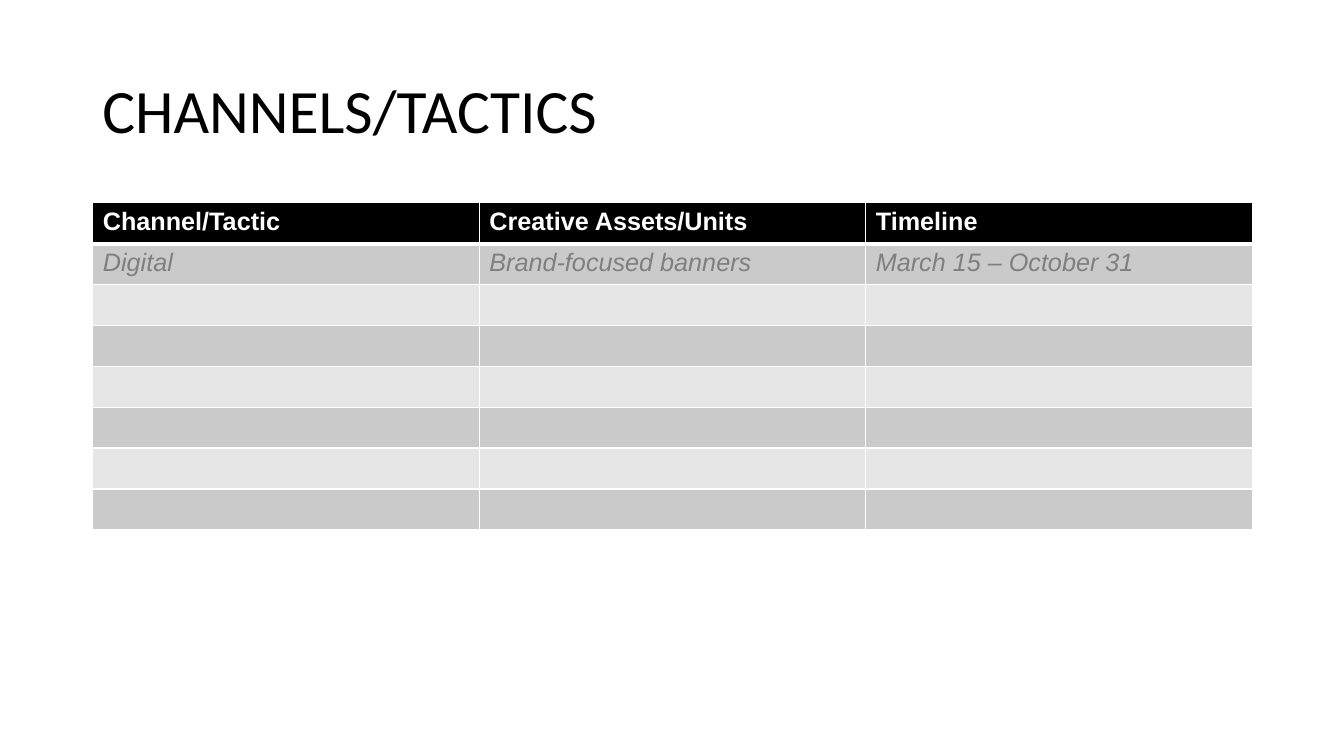
from lxml.etree import SubElement as Sub
from pptx import Presentation
from pptx.dml.color import RGBColor as RGB
from pptx.enum.text import MSO_ANCHOR as Anchor
from pptx.oxml.ns import qn
from pptx.util import Cm, Pt

COLORS = {
    "black": "000000",
    "white": "FFFFFF",
    "gray": "7F7F7F",
    "dark": "CACACA",
    "light": "E6E6E6",
}
ROWS = [
    ["Channel/Tactic", "Creative Assets/Units", "Timeline"],
    ["Digital", "Brand-focused banners", "March 15 – October 31"],
] + [[""] * 3] * 6


def style(font, name, size, color):
    font.name = name
    font.size = Pt(size)
    font.color.rgb = RGB.from_string(COLORS[color])


def border(cell, side, width):
    props = cell._tc.get_or_add_tcPr()
    line = Sub(props, qn("a:ln" + side), w=str(Pt(width)))
    fill = Sub(line, qn("a:solidFill"))
    Sub(fill, qn("a:srgbClr"), val=COLORS["white"])


deck = Presentation()
deck.slide_width, deck.slide_height = Cm(33.87), Cm(19.05)
slide = deck.slides.add_slide(deck.slide_layouts[6])

# Title
box = slide.shapes.add_textbox(Cm(2.33), Cm(1.01), Cm(29.21), Cm(3.68))
frame = box.text_frame
frame.word_wrap = True
frame.vertical_anchor = Anchor.MIDDLE
title = frame.paragraphs[0]
title.text = "CHANNELS/TACTICS"
title.line_spacing = 0.9
style(title.font, "Calibri", 44, "black")

# Table of channels
grid = slide.shapes.add_table(
    len(ROWS), 3, Cm(2.34), Cm(5.11), Cm(29.21), Cm(8.24)).table
for col in grid.columns:
    col.width = Cm(9.74)
for r, texts in enumerate(ROWS):
    grid.rows[r].height = Cm(1.03)
    head = r == 0
    shade = "black" if head else "dark" if r % 2 else "light"
    for c, text in enumerate(texts):
        cell = grid.cell(r, c)

        # Borders, with a thick rule under the header
        border(cell, "L", 1)
        border(cell, "R", 1)
        border(cell, "T", 3 if r == 1 else 1)
        border(cell, "B", 3 if head else 1)
        cell.fill.solid()
        cell.fill.fore_color.rgb = RGB.from_string(COLORS[shade])

        # Text
        cell.text = text
        font = cell.text_frame.paragraphs[0].font
        style(font, "Arial", 18, "white" if head else "gray")
        font.bold = head
        font.italic = not head

deck.save("out.pptx")
